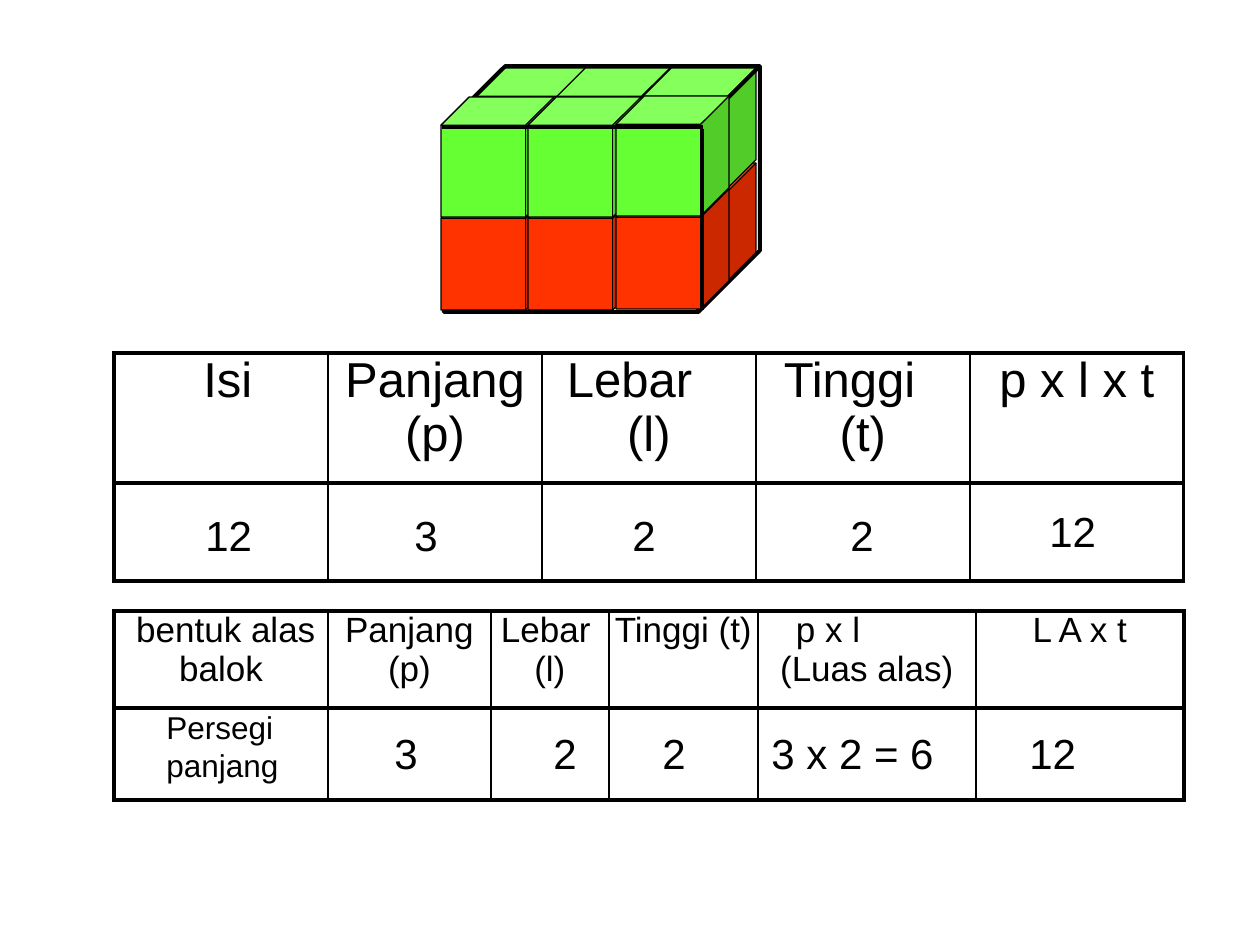
import pptx
import pptx.util
import pptx.dml.color
import pptx.enum.shapes
import pptx.enum.text
import pptx.oxml
import pptx.oxml.ns
from lxml import etree

PX = 914400 / 126
BLACK, RED, GREEN = "000000", "FF3300", "66FF33"
CENTER = pptx.enum.text.PP_ALIGN.CENTER
LEFT = pptx.enum.text.PP_ALIGN.LEFT


def px(*lengths):
    return [round(length * PX) for length in lengths]


def color(hex_string):
    return pptx.dml.color.RGBColor.from_string(hex_string)


presentation = pptx.Presentation()
presentation.slide_width, presentation.slide_height = px(1260, 945)
slide = presentation.slides.add_slide(presentation.slide_layouts[6])

cubes = [(x, y, 113, 120, fill, 0.75) for x in (473, 557, 643)
         for y, fill in ((163, RED), (68, GREEN))]
cubes.append((444, 66, 316, 246, None, 2.25))
cubes += [(x, y, 113, 120, fill, 0.75) for x, rise in ((441, 0), (528, 0), (616, 1))
          for y, fill in ((190 - rise, RED), (97 - rise, GREEN))]
for left, top, width, height, fill, weight in cubes:
    cube = slide.shapes.add_shape(
        pptx.enum.shapes.MSO_SHAPE.CUBE, *px(left, top, width, height))
    cube.shadow.inherit = False
    cube.line.color.rgb = color(BLACK)
    cube.line.width = pptx.util.Pt(weight)
    if fill:
        cube.fill.solid()
        cube.fill.fore_color.rgb = color(fill)
    else:
        cube.fill.background()

for ends in ((702, 129, 702, 310), (442, 127, 703, 127)):
    edge = slide.shapes.add_connector(
        pptx.enum.shapes.MSO_CONNECTOR.STRAIGHT, *px(*ends))
    edge.line.color.rgb = color(BLACK)
    edge.line.width = pptx.util.Pt(2.25)
    etree.SubElement(edge._element.spPr, pptx.oxml.ns.qn("a:effectLst"))

tables = [
    (353, [214] * 5, [130, 98], 28,
     [" Isi", "Panjang\v(p)", "Lebar\n(l)", "Tinggi\n(t)", "p x l x t"],
     {2: 25, 3: 28}),
    (611, [214, 163, 118, 149, 218, 208], [97, 92], 20,
     [" bentuk alas\vbalok", "Panjang\v(p)", "Lebar\n(l)", "Tinggi (t)",
      "p x l\n(Luas alas)", "L A x t"],
     {2: 10, 4: 38}),
]
for top, columns, rows, size, headings, indents in tables:
    frame = slide.shapes.add_table(
        2, len(columns), *px(114, top, sum(columns), sum(rows)))
    table = frame.table
    table.first_row = table.horz_banding = False
    for column, width in zip(table.columns, px(*columns)):
        column.width = width
    for row, height in zip(table.rows, px(*rows)):
        row.height = height
    for index, heading in enumerate(headings):
        for row_index in range(2):
            cell = table.cell(row_index, index)
            cell.fill.background()
            cell.margin_left = cell.margin_right = 0
            cell.margin_top = cell.margin_bottom = 0
            if row_index == 0:
                cell.text = heading
                for paragraph in cell.text_frame.paragraphs:
                    paragraph.alignment = CENTER
                    paragraph.font.size = pptx.util.Pt(size)
                    paragraph.font.name = "Arial"
                    paragraph.font.color.rgb = color(BLACK)
                if index in indents:
                    first = cell.text_frame.paragraphs[0]
                    first.alignment = LEFT
                    first._p.get_or_add_pPr().set("marL", str(px(indents[index])[0]))
            borders = {"L": 2.25 if index == 0 else 1,
                       "R": 2.25 if index == len(columns) - 1 else 1,
                       "T": 2.25, "B": 2.25}
            properties = cell._tc.get_or_add_tcPr()
            for position, (side, weight) in enumerate(borders.items()):
                border = pptx.oxml.parse_xml(
                    f'<a:ln{side} {pptx.oxml.ns.nsdecls("a")} w="{round(weight * 12700)}">'
                    f'<a:solidFill><a:srgbClr val="{BLACK}"/></a:solidFill></a:ln{side}>')
                properties.insert(position, border)

values = [
    (193, 503, 79, 63, "12", 24),
    (402, 503, 49, 63, "3", 24),
    (620, 503, 49, 63, "2", 24),
    (838, 503, 49, 63, "2", 24),
    (1037, 499, 89, 63, "12", 24),
    (154, 702, 189, 88, "Persegi panjang", 18),
    (382, 721, 49, 63, "3", 24),
    (541, 721, 49, 63, "2", 24),
    (650, 721, 49, 63, "2", 24),
    (759, 721, 198, 63, "3 x 2 = 6", 24),
    (1017, 721, 110, 63, "12", 24),
]
for left, top, width, height, text, size in values:
    box = slide.shapes.add_textbox(*px(left, top, width, height))
    box.text_frame.word_wrap = True
    box.text_frame.text = text
    paragraph = box.text_frame.paragraphs[0]
    paragraph.font.size = pptx.util.Pt(size)
    paragraph.font.name = "Arial"
    paragraph.font.color.rgb = color(BLACK)

presentation.save("out.pptx")
